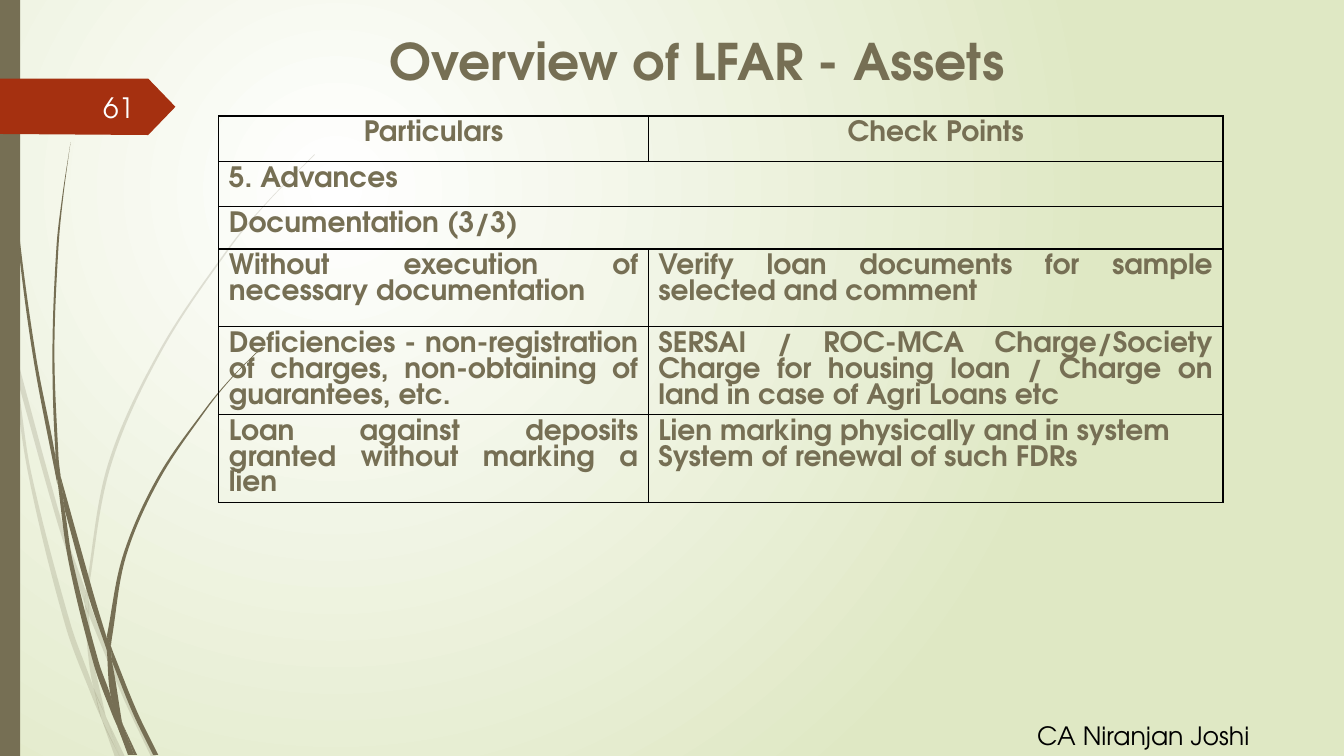
from math import dist

from lxml import etree
from pptx import Presentation
from pptx.dml.color import RGBColor
from pptx.enum.shapes import MSO_SHAPE
from pptx.enum.text import MSO_ANCHOR, PP_ALIGN
from pptx.oxml import parse_xml
from pptx.oxml.ns import nsdecls, qn
from pptx.util import Inches, Pt

RECTANGLE = MSO_SHAPE.RECTANGLE
TOP, MIDDLE = MSO_ANCHOR.TOP, MSO_ANCHOR.MIDDLE
LEFT, CENTER, RIGHT, JUSTIFY = (
    PP_ALIGN.LEFT, PP_ALIGN.CENTER, PP_ALIGN.RIGHT, PP_ALIGN.JUSTIFY)

FONT = "TeX Gyre Adventor"
OLIVE = RGBColor(0x76, 0x6F, 0x54)
RUST = RGBColor(0xA5, 0x30, 0x10)
BLACK = RGBColor(0, 0, 0)
OFF_WHITE = RGBColor(0xFE, 0xFF, 0xFF)

PALE_BLADES = [
    ([(0, 2.82), (.09, 3.22), (.11, 3.5)], [(0, 2.99), (.1, 3.44), (.11, 3.5)]),
    ([(.14, 3.45), (.62, 5.2), (.85, 5.86)], [(.17, 3.76), (.58, 5.22), (.84, 5.99)]),
    ([(.88, 5.96), (.92, 6.07), (1.27, 6.92), (1.55, 7.51)],
     [(.88, 6.1), (1.23, 6.94), (1.5, 7.51)]),
    ([(1.05, 7.11), (1.24, 7.51)], [(1.05, 7.11), (1.19, 7.51)]),
    ([(.11, 3.5), (.17, 3.76), (.31, 4.69), (.7, 6.19), (.93, 6.83), (1.01, 7.14)],
     [(.11, 3.5), (.28, 4.7), (.65, 6.21), (.92, 6.93), (1.01, 7.14)]),
    ([(.84, 5.99), (.88, 6.1), (.91, 6.46), (1.05, 7.11)],
     [(.84, 5.99), (.87, 6.46), (.93, 6.83), (1.05, 7.11)]),
    ([(3.12, 1.53), (2.68, 1.97), (2.28, 2.44), (1.58, 3.48), (1.07, 4.61), (.85, 5.86)],
     [(3.12, 1.54), (2.68, 1.98), (2.29, 2.45), (1.6, 3.49), (1.1, 4.62),
      (.88, 5.84), (.88, 5.96)]),
    ([(1.01, 7.14), (1.19, 7.51)], [(1.01, 7.14), (1.14, 7.51)]),
    ([(.85, 5.86), (.88, 5.96), (.88, 6.1)], [(.85, 5.86), (.84, 5.99), (.88, 6.1)]),
    ([(.93, 6.83), (1.05, 7.11), (1.19, 7.51)], [(.93, 6.83), (1.01, 7.14), (1.19, 7.51)]),
]
DARK_BLADES = [
    ([(.03, 0), (.04, .48), (.07, 1.1), (.17, 2.33), (.33, 3.55), (.57, 4.81)],
     [(.04, 0), (.05, .48), (.08, 1.09), (.19, 2.32), (.36, 3.55), (.55, 4.53), (.57, 4.81)]),
    ([(.6, 4.72), (.93, 5.9), (1.06, 6.33)], [(.64, 5.05), (.88, 5.92), (1.06, 6.45)]),
    ([(1.1, 6.41), (1.13, 6.49), (1.36, 7.06), (1.57, 7.49)],
     [(1.11, 6.56), (1.32, 7.08), (1.52, 7.49)]),
    ([(.57, 4.77), (.64, 5.05), (.72, 5.56), (.98, 6.57), (1.1, 6.91), (1.17, 7.22)],
     [(.57, 4.77), (.68, 5.57), (.93, 6.59), (1.11, 7.08), (1.17, 7.22)]),
    ([(.7, 1.41), (.62, 1.93), (.56, 2.45), (.52, 3.49), (.55, 4.49), (.6, 4.72)],
     [(.7, 1.41), (.63, 1.93), (.58, 2.45), (.54, 3.49), (.58, 4.53), (.6, 4.72)]),
    ([(1.22, 7.19), (1.36, 7.49)], [(1.22, 7.19), (1.33, 7.49)]),
    ([(.55, 4.49), (.6, 4.72), (.64, 5.05)], [(.55, 4.53), (.57, 4.77), (.64, 5.05)]),
    ([(2.6, 3.44), (2.31, 3.73), (2.04, 4.05), (1.56, 4.74), (1.22, 5.51), (1.06, 6.31)],
     [(2.61, 3.44), (2.31, 3.74), (2.05, 4.06), (1.58, 4.76), (1.25, 5.52),
      (1.11, 6.33), (1.1, 6.41)]),
    ([(1.17, 7.22), (1.31, 7.49)], [(1.17, 7.22), (1.27, 7.49)]),
    ([(1.06, 6.45), (1.11, 6.56), (1.21, 7.16), (1.22, 7.19)],
     [(1.06, 6.45), (1.1, 6.91), (1.22, 7.19)]),
    ([(1.06, 6.31), (1.1, 6.41), (1.11, 6.56)], [(1.06, 6.31), (1.06, 6.45), (1.11, 6.56)]),
    ([(1.1, 6.91), (1.22, 7.19), (1.33, 7.49)], [(1.1, 6.91), (1.17, 7.22), (1.3, 7.49)]),
]
NUMBER_TAB = [(0, .78), (1.47, .78), (1.74, 1.06), (1.47, 1.34), (0, 1.33)]

COLUMN_WIDTHS = [4.26, 5.7]
ROW_HEIGHTS = [.45, .45, .42, .77, .87, .87]
ROWS = [
    (CENTER, ["Particulars", "Check Points"]),
    (LEFT, ["5. Advances"]),
    (JUSTIFY, ["Documentation (3/3)"]),
    (JUSTIFY, ["Without execution of necessary documentation",
               "Verify loan documents for sample selected and comment"]),
    (JUSTIFY, ["Deficiencies - non-registration of charges, "
               "non-obtaining of guarantees, etc.",
               "SERSAI / ROC-MCA Charge/Society Charge for housing loan / "
               "Charge on land in case of Agri Loans etc"]),
    (JUSTIFY, ["Loan against deposits granted without marking a lien",
               "Lien marking physically and in system\nSystem of renewal of such FDRs"]),
]


def set_background(slide):
    fill = slide.background.fill
    fill.gradient()
    for position, color in enumerate(("FFFFFF", "DFE8C4")):
        fill.gradient_stops[position].color.rgb = RGBColor.from_string(color)
        fill.gradient_stops[position].position = position
    linear = next(slide.background._cSld.iter(qn("a:lin")))
    linear.getparent().replace(linear, parse_xml(
        f'<a:path {nsdecls("a")} path="circle">'
        '<a:fillToRect l="50000" t="50000" r="100000" b="100000"/></a:path>'))


def bezier_segments(points):
    lengths = [dist(a, b) for a, b in zip(points, points[1:])]
    tangents = []
    for i in range(len(points)):
        before, after = max(i - 1, 0), min(i + 1, len(points) - 1)
        span = sum(lengths[before:after])
        tangents.append([(b - a) / span for a, b in zip(points[before], points[after])])
    for i, length in enumerate(lengths):
        yield ([p + t * length / 3 for p, t in zip(points[i], tangents[i])],
               [p - t * length / 3 for p, t in zip(points[i + 1], tangents[i + 1])],
               points[i + 1])


def paint(shape, color, alpha=None):
    shape.shadow.inherit = False
    shape.fill.solid()
    shape.fill.fore_color.rgb = color
    shape.line.fill.background()
    if alpha is not None:
        srgb = next(shape._element.spPr.iter(qn("a:srgbClr")))
        etree.SubElement(srgb, qn("a:alpha"), val=str(alpha * 1000))


def add_outline(slide, points, color, alpha=None):
    corners = [(Inches(x), Inches(y)) for x, y in points]
    builder = slide.shapes.build_freeform(*corners[0])
    builder.add_line_segments(corners[1:], close=True)
    outline = builder.convert_to_shape()
    paint(outline, color, alpha)
    return outline


def add_blade(slide, outer, inner, alpha):
    back = inner[::-1]
    shared_tip = outer[-1] == back[0]
    blade = add_outline(slide, outer + back[shared_tip:], OLIVE, alpha)
    curves = list(bezier_segments(outer))
    curves += [None] * (not shared_tip) + list(bezier_segments(back))
    for line, curve in zip(list(blade._element.iter(qn("a:lnTo"))), curves):
        if curve:
            bend = etree.Element(qn("a:cubicBezTo"))
            for x, y in curve:
                etree.SubElement(bend, qn("a:pt"), x=str(Inches(x) - blade.left),
                                 y=str(Inches(y) - blade.top))
            line.getparent().replace(line, bend)


def set_text(frame, text, size, color, align, bold=False):
    frame.text = text
    for paragraph in frame.paragraphs:
        paragraph.alignment = align
        font = paragraph.font
        font.name, font.size, font.bold = FONT, Pt(size), bold
        font.color.rgb = color


def place_text(shape, box, text, size, color, align, anchor, bold=False):
    shape.left, shape.top, shape.width, shape.height = map(Inches, box)
    shape.text_frame.word_wrap = True
    shape.text_frame.vertical_anchor = anchor
    set_text(shape.text_frame, text, size, color, align, bold)


def add_label(slide, box, *style):
    place_text(slide.shapes.add_textbox(*map(Inches, box)), box, *style)


def set_borders(cell):
    properties = cell._tc.get_or_add_tcPr()
    for index, side in enumerate(("lnL", "lnR", "lnT", "lnB")):
        properties.insert(index, parse_xml(
            f'<a:{side} {nsdecls("a")} w="12700"><a:solidFill>'
            f'<a:srgbClr val="{BLACK}"/></a:solidFill></a:{side}>'))


def add_checklist(slide):
    table = slide.shapes.add_table(
        len(ROWS), len(COLUMN_WIDTHS), Inches(2.17), Inches(1.15),
        Inches(sum(COLUMN_WIDTHS)), Inches(sum(ROW_HEIGHTS))).table
    table.first_row = table.horz_banding = False
    for column, width in zip(table.columns, COLUMN_WIDTHS):
        column.width = Inches(width)
    for r, (align, texts) in enumerate(ROWS):
        table.rows[r].height = Inches(ROW_HEIGHTS[r])
        if len(texts) == 1:
            table.cell(r, 0).merge(table.cell(r, 1))
        for cell in table.rows[r].cells:
            cell.fill.background()
            set_borders(cell)
        for c, text in enumerate(texts):
            frame = table.cell(r, c).text_frame
            set_text(frame, text, 20, OLIVE, align, True)
            for paragraph in frame.paragraphs:
                paragraph.line_spacing = Pt(18.5)


def main():
    deck = Presentation()
    deck.slide_width, deck.slide_height = Inches(13.33), Inches(7.5)
    slide = deck.slides.add_slide(deck.slide_layouts[5])
    set_background(slide)
    for blades, alpha in ((PALE_BLADES, 20), (DARK_BLADES, None)):
        for outer, inner in blades:
            add_blade(slide, outer, inner, alpha)
    paint(slide.shapes.add_shape(RECTANGLE, 0, 0, Inches(.2), Inches(7.5)), OLIVE)
    add_outline(slide, NUMBER_TAB, RUST)
    place_text(slide.shapes.title, (2.41, .23, 9, .74),
               "Overview of LFAR - Assets", 36, OLIVE, CENTER, MIDDLE, True)
    add_checklist(slide)
    add_label(slide, (.58, .86, .85, .4), "61", 20, OFF_WHITE, RIGHT, MIDDLE)
    add_label(slide, (9.59, 7.1, 3.5, .4), "CA Niranjan Joshi", 18, BLACK, CENTER, TOP)
    deck.save("out.pptx")


if __name__ == "__main__":
    main()
